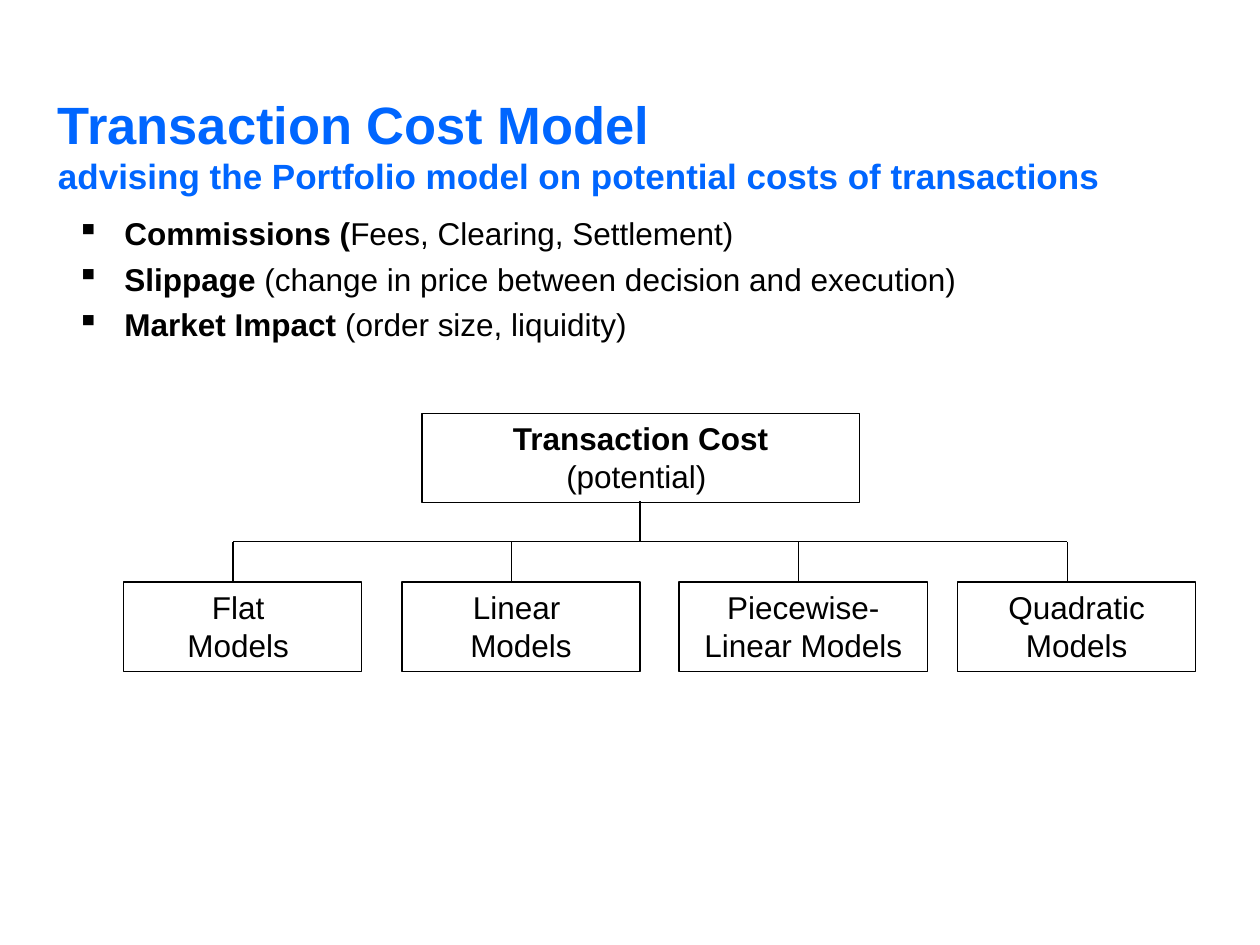
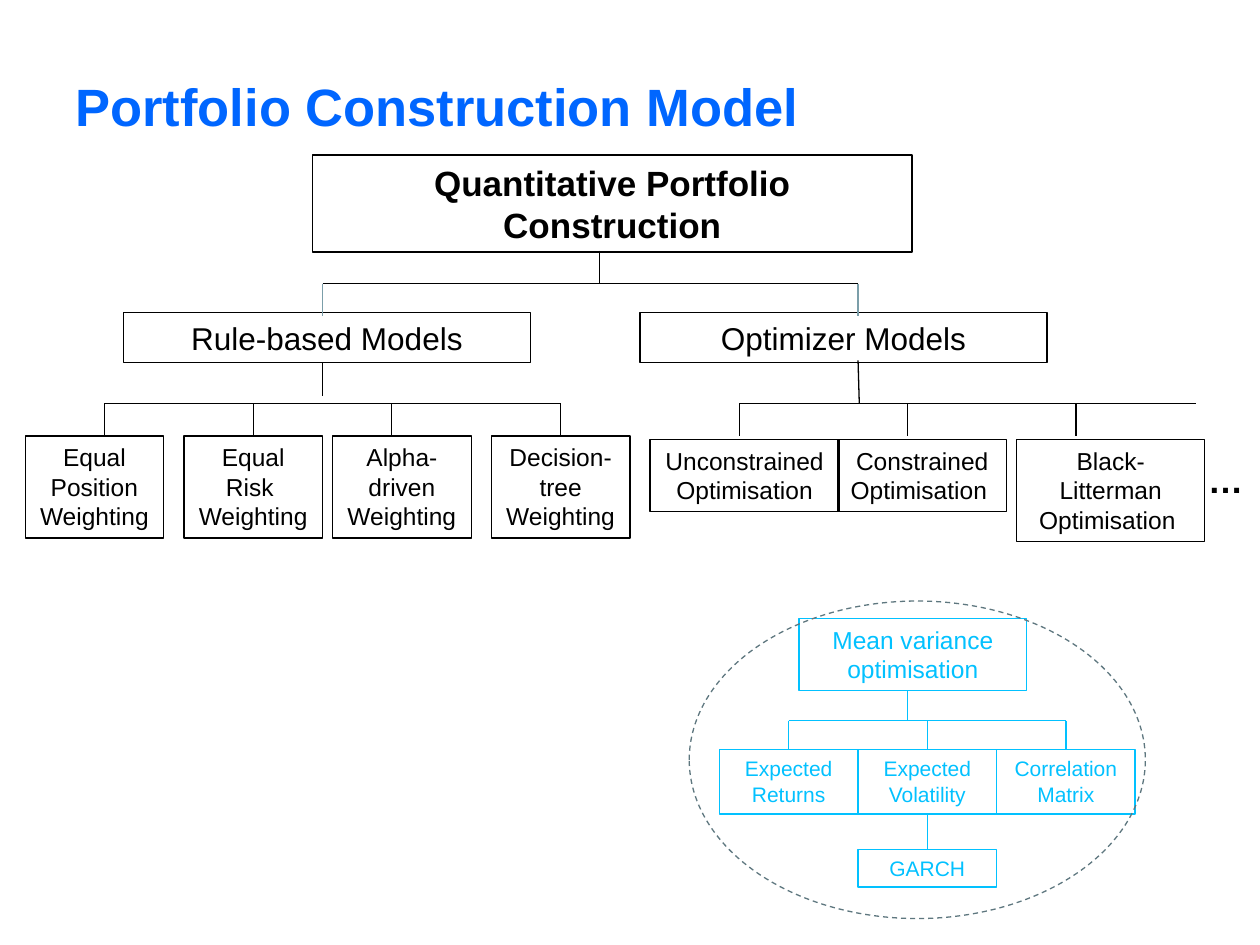
from lxml import etree
from pptx import Presentation
from pptx.dml.color import RGBColor
from pptx.enum.dml import MSO_LINE
from pptx.enum.shapes import MSO_CONNECTOR, MSO_SHAPE
from pptx.enum.text import MSO_ANCHOR, MSO_AUTO_SIZE, PP_ALIGN
from pptx.oxml.ns import qn
from pptx.util import Inches, Pt

RECT, ELLIPSE = MSO_SHAPE.RECTANGLE, MSO_SHAPE.OVAL
STRAIGHT, DASH = MSO_CONNECTOR.STRAIGHT, MSO_LINE.DASH
LEFT, CENTER = PP_ALIGN.LEFT, PP_ALIGN.CENTER
TITLE_ONLY = 5

FONT = "Arial"
COLORS = {
    "title": "0066FF",
    "black": "000000",
    "cyan": "02C1FF",
    "steel": "7B9EA9",
    "slate": "5E777F",
}


def rgb(name):
    return RGBColor.from_string(COLORS[name])


def add_bullet(paragraph, char="▪", indent=0.38):
    props = paragraph._p.get_or_add_pPr()
    props.set("marL", str(Inches(indent)))
    props.set("indent", str(-Inches(indent)))
    etree.SubElement(props, qn("a:buChar")).set("char", char)


def write_text(frame, paragraphs, size=18, color="black", bold=False,
               align=LEFT, bullet=False, space_before=0):
    """Each paragraph is a string or a list of (text, format) runs; a newline breaks the line."""
    frame.vertical_anchor = MSO_ANCHOR.TOP
    frame.auto_size = MSO_AUTO_SIZE.NONE
    frame.word_wrap = True
    for number, content in enumerate(paragraphs):
        paragraph = frame.add_paragraph() if number else frame.paragraphs[0]
        if bullet:
            add_bullet(paragraph)
        paragraph.alignment = align
        if number and space_before:
            paragraph.space_before = Pt(space_before)
        runs = [(content, {})] if isinstance(content, str) else content
        for text, style in runs:
            for part, piece in enumerate(text.split("\n")):
                if part:
                    paragraph.add_line_break()
                if not piece:
                    continue
                run = paragraph.add_run()
                run.text = piece
                run.font.name = FONT
                run.font.size = Pt(style.get("size", size))
                run.font.bold = style.get("bold", bold)
                run.font.color.rgb = rgb(color)


class Deck:
    def __init__(self):
        self.prs = Presentation()
        self.prs.slide_width, self.prs.slide_height = Inches(10), Inches(7.5)
        self.slide = None

    def new_slide(self, title, left, top, width, height):
        self.slide = self.prs.slides.add_slide(self.prs.slide_layouts[TITLE_ONLY])
        heading = self.slide.shapes.title
        heading.left, heading.top = Inches(left), Inches(top)
        heading.width, heading.height = Inches(width), Inches(height)
        write_text(heading.text_frame, [title], size=30, color="title", bold=True)

    def text(self, paragraphs, left, top, width, height, **style):
        area = self.slide.shapes.add_textbox(
            Inches(left), Inches(top), Inches(width), Inches(height))
        write_text(area.text_frame, paragraphs, **style)

    def outline(self, kind, left, top, width, height, color):
        shape = self.slide.shapes.add_shape(
            kind, Inches(left), Inches(top), Inches(width), Inches(height))
        shape.shadow.inherit = False
        shape.fill.background()
        shape.line.color.rgb = rgb(color)
        shape.line.width = Pt(0.75)
        return shape

    def box(self, paragraphs, left, top, width, height, color="black", **style):
        shape = self.outline(RECT, left, top, width, height, color)
        write_text(shape.text_frame, paragraphs, color=color, align=CENTER, **style)

    def row(self, items, top, height, **style):
        """Boxes side by side; an item is (paragraphs, left, width)."""
        for paragraphs, left, width in items:
            self.box(paragraphs, left, top, width, height, **style)

    def line(self, x1, y1, x2, y2, color="black"):
        link = self.slide.shapes.add_connector(
            STRAIGHT, Inches(x1), Inches(y1), Inches(x2), Inches(y2))
        link.line.color.rgb = rgb(color)
        link.line.width = Pt(0.75)
        etree.SubElement(link._element.spPr, qn("a:effectLst"))

    def branches(self, bar_y, drops, bottom, color="black", drop_color=None, bar_end=None):
        """A horizontal bar with a line down to each child."""
        self.line(drops[0], bar_y, bar_end or drops[-1], bar_y, color)
        for x in drops:
            self.line(x, bar_y, x, bottom, drop_color or color)


def transaction_cost(deck):
    deck.new_slide([
        ("Transaction Cost Model\n", {}),
        ("advising the Portfolio model on potential costs of transactions", {"size": 20}),
    ], 0.36, 0.68, 9.28, 0.63)

    # Cost components
    strong = {"bold": True}
    deck.text([
        [("Commissions (", strong), ("Fees, Clearing, Settlement)", {})],
        [("Slippage", strong), (" (change in price between decision and execution)", {})],
        [("Market Impact ", strong), ("(order size, liquidity)", {})],
    ], 0.51, 1.65, 9, 1.23, bullet=True, space_before=4.4)

    # Cost model tree
    deck.box([[("Transaction Cost", strong)], "(potential) "], 3.35, 3.28, 3.47, 0.71)
    deck.row([
        (["Flat ", "Models "], 0.98, 1.89),
        (["Linear ", "Models"], 3.19, 1.89),
        (["Piecewise-Linear Models"], 5.39, 1.97),
        (["Quadratic Models"], 7.6, 1.89),
    ], 4.62, 0.71)
    deck.line(5.08, 3.98, 5.08, 4.3)
    deck.branches(4.3, [1.85, 4.06, 6.34, 8.47], 4.62)


def portfolio_construction(deck):
    deck.new_slide([("Portfolio Construction Model", {})], 0.5, 0.54, 9, 0.69)

    # Root and the two families
    deck.box(["Quantitative Portfolio Construction"], 2.48, 1.23, 4.76, 0.77,
             size=20, bold=True)
    deck.row([
        (["Rule-based Models"], 0.98, 3.23),
        (["Optimizer Models"], 5.08, 3.23),
    ], 2.48, 0.4)
    deck.line(4.76, 1.99, 4.76, 2.25)
    deck.branches(2.25, [2.56, 6.81], 2.51, drop_color="steel")

    # Rule-based models
    deck.row([
        (["Equal Position Weighting"], 0.2, 1.1),
        (["Equal\nRisk ", "Weighting"], 1.46, 1.1),
        (["Alpha-driven Weighting"], 2.64, 1.1),
        (["Decision-tree Weighting"], 3.9, 1.1),
    ], 3.46, 0.81, size=14)
    deck.line(2.56, 2.88, 2.56, 3.14)
    deck.branches(3.2, [0.83, 2.01, 3.11, 4.45], 3.46)

    # Optimizer models
    deck.row([
        (["Unconstrained Optimisation"], 5.16, 1.5),
        (["Constrained Optimisation "], 6.65, 1.34),
    ], 3.49, 0.57, size=14)
    deck.box(["Black-Litterman Optimisation "], 8.07, 3.49, 1.49, 0.81, size=14)
    deck.line(6.81, 2.86, 6.82, 3.2)
    deck.branches(3.2, [5.87, 7.2, 8.54], 3.46, bar_end=9.49)
    deck.text(["…"], 9.49, 3.59, 0.51, 0.44, size=20, bold=True)

    # Mean variance inputs
    deck.box(["Mean variance optimisation"], 6.34, 4.91, 1.81, 0.57, color="cyan", size=14)
    inputs = ["Expected Returns", "Expected Volatility", "Correlation Matrix"]
    width = 1.1
    lefts = [5.71 + width * i for i in range(len(inputs))]
    deck.row([([name], left, width) for name, left in zip(inputs, lefts)],
             5.95, 0.51, color="cyan", size=12)
    deck.box(["GARCH"], lefts[1], 6.74, width, 0.3, color="cyan", size=12)
    centers = [left + width / 2 for left in lefts]
    deck.line(7.2, 5.48, 7.2, 5.72, "cyan")
    deck.branches(5.72, centers, 5.95, "cyan")
    deck.line(centers[1], 6.46, centers[1], 6.74, "cyan")
    ring = deck.outline(ELLIPSE, 5.47, 4.77, 3.62, 2.52, "slate")
    ring.line.dash_style = DASH


def main():
    deck = Deck()
    transaction_cost(deck)
    portfolio_construction(deck)
    deck.prs.save("out.pptx")


if __name__ == "__main__":
    main()
